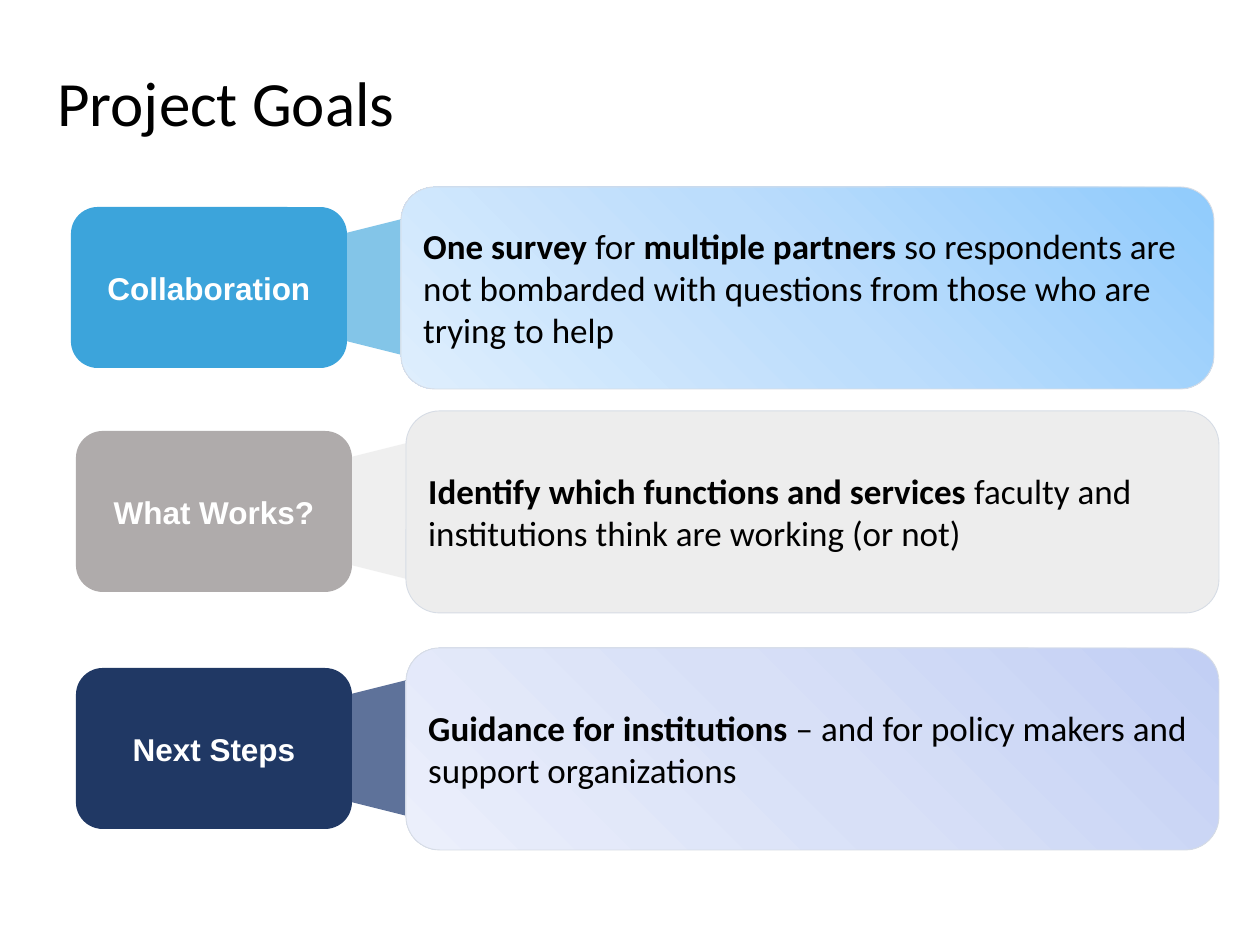
from copy import deepcopy

from lxml import etree
from pptx import Presentation
from pptx.dml.color import RGBColor
from pptx.enum.shapes import MSO_SHAPE
from pptx.enum.text import MSO_ANCHOR, PP_ALIGN
from pptx.oxml.ns import qn
from pptx.util import Emu, Pt

PX = 914400 // 126
ROUNDED = MSO_SHAPE.ROUNDED_RECTANGLE
CARD = MSO_SHAPE.FLOWCHART_ALTERNATE_PROCESS
TRAPEZOID = MSO_SHAPE.TRAPEZOID
MIDDLE = MSO_ANCHOR.MIDDLE
LEFT, CENTER = PP_ALIGN.LEFT, PP_ALIGN.CENTER

# left, top, label, label fill, funnel fill, card fills, text runs (text, bold)
GOALS = [
    (71, 187, "Collaboration", "3CA4DB", "3CA4DB", ["90CBFC", "BCDDFC", "DEEEFD"],
     [("One survey ", True), ("for ", False), ("multiple partners ", True),
      ("so respondents are not bombarded with questions from those who are "
       "trying to help", False)]),
    (76, 411, "What Works?", "AFABAB", "E7E6E6", ["EDEDED"],
     [("Identify which functions and services ", True),
      ("faculty and institutions think are working (or not)", False)]),
    (76, 648, "Next Steps", "203864", "002060", ["C2CFF4", "D8E0F7", "EBEFFB"],
     [("Guidance for institutions ", True),
      ("– and for policy makers and support organizations", False)]),
]


def rgb(value):
    return RGBColor.from_string(value)


def box(left, top, width, height):
    return [Emu(length * PX) for length in (left, top, width, height)]


def write(shape, runs, font, size, color, align=LEFT):
    """Fill a shape with one vertically centred paragraph of (text, bold) runs."""
    frame = shape.text_frame
    frame.word_wrap = True
    frame.vertical_anchor = MIDDLE
    paragraph = frame.paragraphs[0]
    paragraph.alignment = align
    for text, bold in runs:
        run = paragraph.add_run()
        run.text = text
        run.font.name = font
        run.font.size = Pt(size)
        run.font.bold = bold
        run.font.color.rgb = rgb(color)
    return paragraph


def paint(shape, colors):
    """Fill with one colour, or with a gradient from top right to bottom left."""
    fill = shape.fill
    if len(colors) == 1:
        fill.solid()
        fill.fore_color.rgb = rgb(colors[0])
        return
    fill.gradient()
    fill.gradient_angle = 225
    stop_list = shape._element.spPr.find(qn("a:gradFill")).find(qn("a:gsLst"))
    for _ in range(len(colors) - len(stop_list)):
        stop_list.append(deepcopy(stop_list[0]))
    for index, (stop, color) in enumerate(zip(fill.gradient_stops, colors)):
        stop.position = index / (len(colors) - 1)
        stop.color.rgb = rgb(color)


def set_opacity(shape, percent):
    color = shape._element.spPr.find(qn("a:solidFill"))[0]
    etree.SubElement(color, qn("a:alpha")).set("val", str(percent * 1000))


def add_block(slide, kind, area, colors):
    shape = slide.shapes.add_shape(kind, *box(*area))
    shape.shadow.inherit = False
    paint(shape, colors)
    shape.line.fill.background()
    return shape


def add_title(slide, area):
    title = slide.shapes.add_textbox(*box(*area))
    paragraph = write(title, [("Project Goals", False)], "Calibri", 36, "000000")
    paragraph.line_spacing = 0.9


def add_goal(slide, left, top, label, label_fill, funnel_fill, card_fills, runs):
    """Place a label, the funnel that widens from it, and the card it opens into."""
    funnel = add_block(slide, TRAPEZOID, (left + 209, top + 46, 136, 108), [funnel_fill])
    funnel.rotation = 270
    set_opacity(funnel, 63)

    tab = add_block(slide, ROUNDED, (left, top + 20, 276, 161), [label_fill])
    write(tab, [(label, True)], "Arial", 18, "FFFFFF", CENTER)

    card = add_block(slide, CARD, (left + 330, top, 813, 202), card_fills)
    card.line.color.rgb = rgb("D6DCE5")
    card.line.width = Pt(0.5)
    write(card, runs, "Calibri", 20, "000000")


def main():
    presentation = Presentation()
    presentation.slide_width = Emu(1260 * PX)
    presentation.slide_height = Emu(945 * PX)
    slide = presentation.slides.add_slide(presentation.slide_layouts[6])
    add_title(slide, (45, 15, 1086, 183))
    for goal in GOALS:
        add_goal(slide, *goal)
    presentation.save("out.pptx")


if __name__ == "__main__":
    main()
